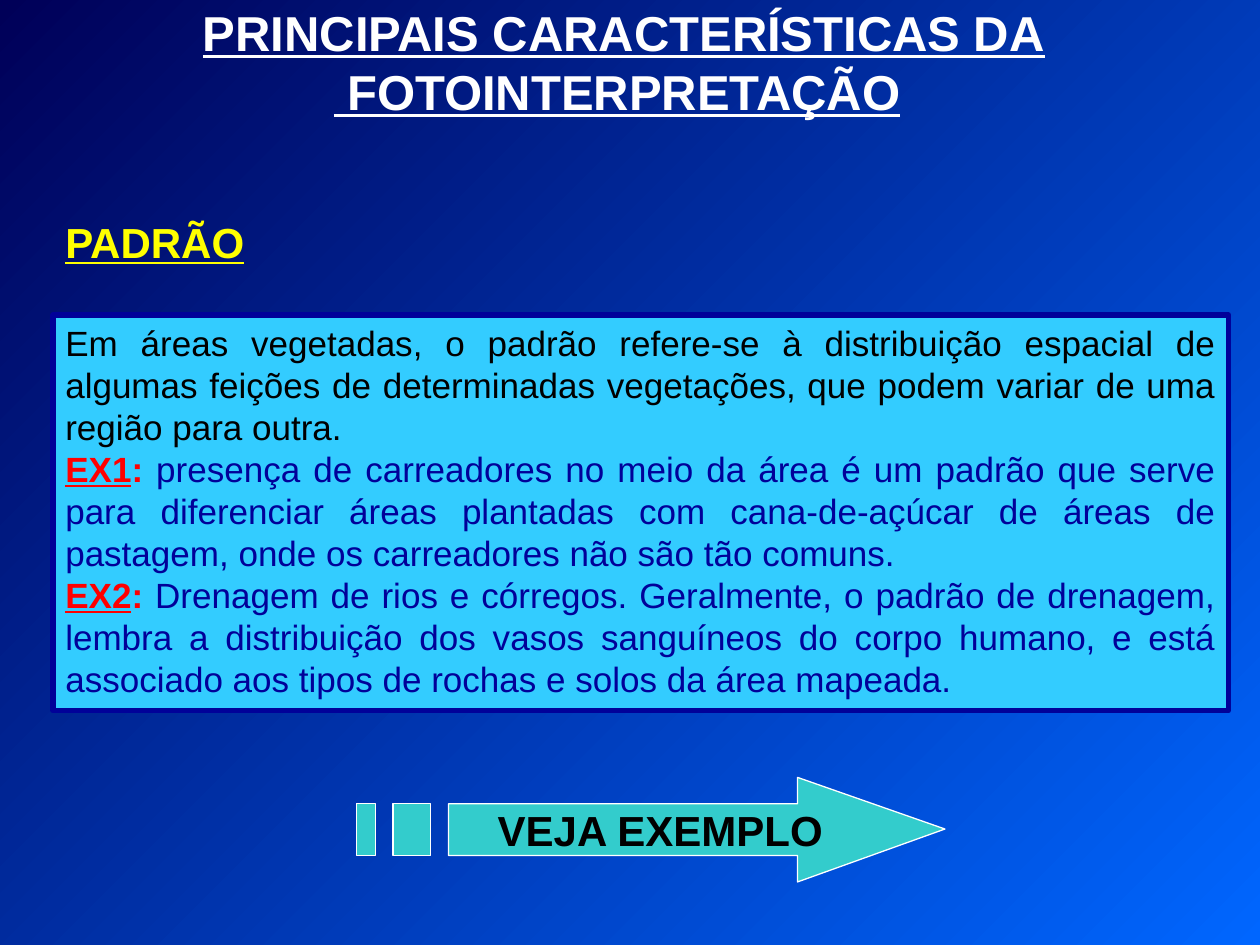
from pptx import Presentation
from pptx.dml.color import RGBColor
from pptx.enum.shapes import MSO_SHAPE
from pptx.enum.text import MSO_ANCHOR, PP_ALIGN
from pptx.util import Inches, Pt

RECT = MSO_SHAPE.RECTANGLE
LEFT, CENTER, JUSTIFY = PP_ALIGN.LEFT, PP_ALIGN.CENTER, PP_ALIGN.JUSTIFY
TOP, MIDDLE = MSO_ANCHOR.TOP, MSO_ANCHOR.MIDDLE

WHITE, BLACK, YELLOW, RED = "FFFFFF", "000000", "FFFF00", "FF0000"
NAVY, SKY, TEAL = "010199", "33CCFF", "33CCCC"


def rgb(value):
    return RGBColor.from_string(value)


def run(text, color, bold=False, underline=False):
    """Describe one run of text."""
    return text, color, bold, underline


class SlideBuilder:
    """Holds the text style and the slide being built."""

    font = "Arial"

    def __init__(self, slide):
        self.slide = slide
        self.shapes = slide.shapes

    def background(self, colors, angle):
        fill = self.slide.background.fill
        fill.gradient()
        fill.gradient_angle = angle
        for stop, color in zip(fill.gradient_stops, colors):
            stop.color.rgb = rgb(color)

    def add_text(self, sp, paragraphs, size, align=LEFT, anchor=TOP, wrap=False):
        """Fill a shape with paragraphs, each a list of runs."""
        tf = sp.text_frame
        tf.word_wrap = wrap
        tf.vertical_anchor = anchor
        for i, runs in enumerate(paragraphs):
            p = tf.add_paragraph() if i else tf.paragraphs[0]
            p.alignment = align
            for text, color, bold, underline in runs:
                r = p.add_run()
                r.text = text
                r.font.name = self.font
                r.font.size = Pt(size)
                r.font.bold = bold
                r.font.underline = underline
                r.font.color.rgb = rgb(color)

    def paint(self, sp, fill, line, width):
        sp.shadow.inherit = False
        sp.fill.solid()
        sp.fill.fore_color.rgb = rgb(fill)
        sp.line.color.rgb = rgb(line)
        sp.line.width = Pt(width)

    def text(self, x, y, w, h, paragraphs, size, align=LEFT):
        sp = self.shapes.add_textbox(Inches(x), Inches(y), Inches(w), Inches(h))
        self.add_text(sp, paragraphs, size, align)

    def panel(self, x, y, w, h, paragraphs, size):
        sp = self.shapes.add_shape(RECT, Inches(x), Inches(y), Inches(w), Inches(h))
        self.paint(sp, SKY, NAVY, 3)
        self.add_text(sp, paragraphs, size, JUSTIFY, wrap=True)

    def outline(self, contours, paragraphs, size):
        """Draw closed contours as one shape with a centred label."""
        contours = [[(Inches(x), Inches(y)) for x, y in c] for c in contours]
        builder = self.shapes.build_freeform(*contours[0][0])
        for i, (start, *rest) in enumerate(contours):
            if i:
                builder.move_to(*start)
            builder.add_line_segments(rest, close=True)
        sp = builder.convert_to_shape()
        self.paint(sp, TEAL, WHITE, 0.75)
        self.add_text(sp, paragraphs, size, CENTER, MIDDLE)
        sp.text_frame.margin_left = Inches(0.25)


def striped_arrow():
    """Contours of a right arrow followed by its two tail stripes."""
    top, upper, middle, lower, bottom = 6.17, 6.38, 6.58, 6.79, 7
    head, tip = 6.33, 7.5
    arrow = [(head, top), (head, upper), (3.56, upper), (3.56, lower),
             (head, lower), (head, bottom), (tip, middle)]
    stripes = [[(x1, upper), (x1, lower), (x2, lower), (x2, upper)]
               for x1, x2 in ((3.12, 3.42), (2.83, 2.98))]
    return [arrow, *stripes]


def example(label, text):
    return [run(label, RED, True, True), run(":", RED, True), run(text, NAVY)]


def main():
    prs = Presentation()
    prs.slide_width, prs.slide_height = Inches(10), Inches(7.5)
    s = SlideBuilder(prs.slides.add_slide(prs.slide_layouts[6]))
    s.background(("000058", "0066FF"), 315)

    s.text(1.49, -0.03, 6.92, 1.03, [
        [run("PRINCIPAIS CARACTERÍSTICAS DA", WHITE, True, True)],
        [run(" FOTOINTERPRETAÇÃO", WHITE, True, True), run(" ", WHITE, True)],
    ], 28, CENTER)

    s.panel(0.42, 2.5, 9.33, 3.14, [
        [run("Em áreas vegetadas, o padrão refere-se à distribuição espacial de "
             "algumas feições de determinadas vegetações, que podem variar de uma "
             "região para outra. ", BLACK)],
        example("EX1", " presença de carreadores no meio da área é um padrão que "
                "serve para diferenciar áreas plantadas com cana-de-açúcar de áreas "
                "de pastagem, onde os carreadores não são tão comuns. "),
        example("EX2", " Drenagem de rios e córregos. Geralmente, o padrão de "
                "drenagem, lembra a distribuição dos vasos sanguíneos do corpo "
                "humano, e está associado aos tipos de rochas e solos da área "
                "mapeada."),
    ], 20)

    s.text(0.42, 1.67, 1.65, 0.5, [[run("PADRÃO", YELLOW, True, True)]], 24)
    s.outline(striped_arrow(), [[run("VEJA EXEMPLO", BLACK, True)]], 24)

    prs.save("out.pptx")


if __name__ == "__main__":
    main()
